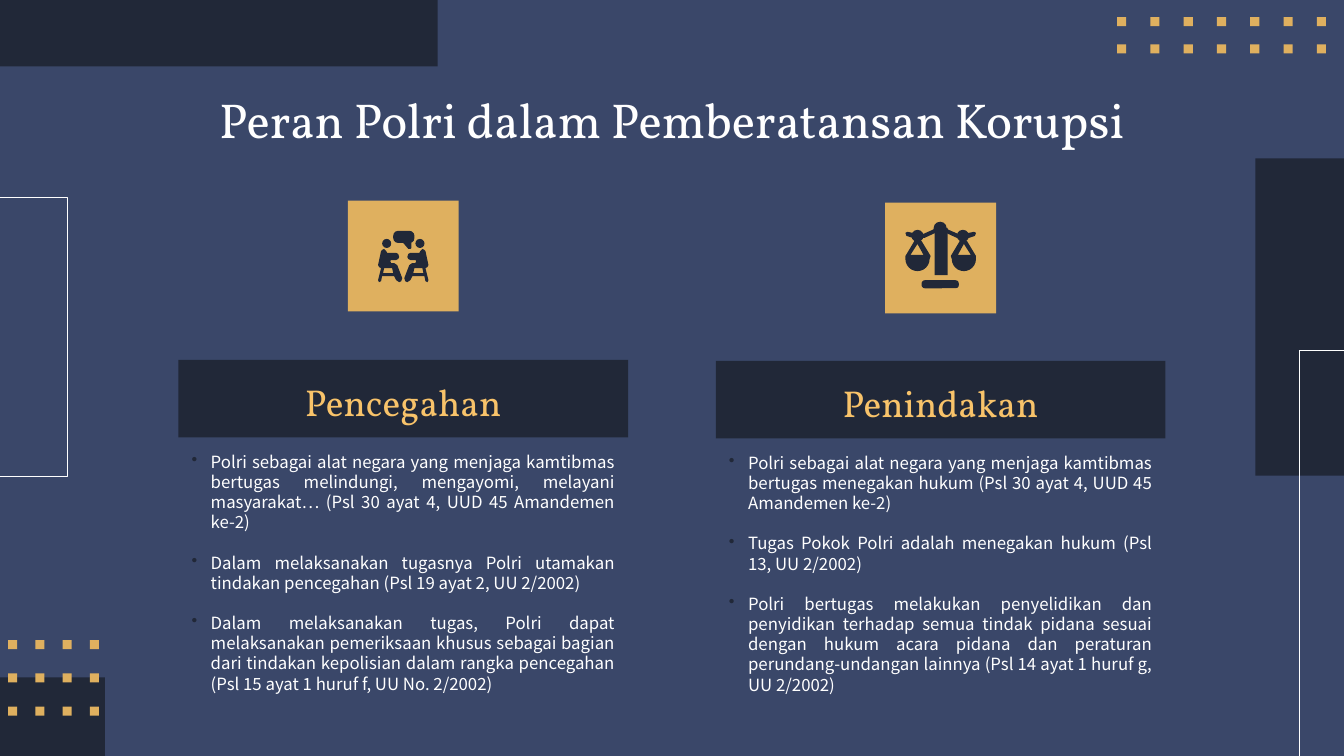
import math
from dataclasses import dataclass

from lxml import etree
from pptx import Presentation, util as u
from pptx.dml.color import RGBColor
from pptx.enum import shapes, text
from pptx.oxml import ns

Inches, Pt = u.Inches, u.Pt


@dataclass(frozen=True)
class Theme:
    back: str = "3A4769"
    dark: str = "212838"
    gold: str = "DFB05F"
    heading: str = "F8C36A"
    white: str = "FFFFFF"
    serif: str = "Vollkorn"
    sans: str = "Noto Sans CJK SC"
    title_size: float = 35
    heading_size: float = 26.7
    body_size: float = 12
    body_line: float = 14.4


T = Theme()
RECT, OVAL = shapes.MSO_SHAPE.RECTANGLE, shapes.MSO_SHAPE.OVAL
ROUND = shapes.MSO_SHAPE.ROUNDED_RECTANGLE
LEFT_X, COLUMN_STEP = 1.77, 5.33

COLUMNS = [
    ("Pencegahan", 3.57, 1.99, [
        "Polri sebagai alat negara yang menjaga kamtibmas bertugas melindungi, "
        "mengayomi, melayani masyarakat… (Psl 30 ayat 4, UUD 45 Amandemen ke-2)",
        "Dalam melaksanakan tugasnya Polri utamakan tindakan pencegahan "
        "(Psl 19 ayat 2, UU 2/2002)",
        "Dalam melaksanakan tugas, Polri dapat melaksanakan pemeriksaan khusus "
        "sebagai bagian dari tindakan kepolisian dalam rangka pencegahan "
        "(Psl 15 ayat 1 huruf f, UU No. 2/2002)",
    ]),
    ("Penindakan", 3.58, 2.01, [
        "Polri sebagai alat negara yang menjaga kamtibmas bertugas menegakan "
        "hukum (Psl 30 ayat 4, UUD 45 Amandemen ke-2)",
        "Tugas Pokok Polri adalah menegakan hukum (Psl 13, UU 2/2002)",
        "Polri bertugas melakukan penyelidikan dan penyidikan terhadap semua "
        "tindak pidana sesuai dengan hukum acara pidana dan peraturan "
        "perundang-undangan lainnya (Psl 14 ayat 1 huruf g, UU 2/2002)",
    ]),
]

# Left half of each mirrored icon part
SITTER = [
    (3.81, 2.47), (3.79, 2.48), (3.78, 2.49), (3.75, 2.63), (3.76, 2.65),
    (3.78, 2.66), (3.75, 2.78), (3.76, 2.8), (3.78, 2.79), (3.79, 2.74),
    (3.91, 2.74), (3.93, 2.78), (3.96, 2.8), (3.98, 2.79), (3.99, 2.76),
    (3.94, 2.63), (3.91, 2.61), (3.88, 2.61), (3.87, 2.59), (3.88, 2.58),
    (3.93, 2.58), (3.95, 2.57), (3.96, 2.55), (3.95, 2.52), (3.93, 2.51),
    (3.84, 2.51), (3.83, 2.49),
]
STOOL_GAP = [(3.89, 2.66), (3.9, 2.71), (3.8, 2.71), (3.81, 2.66)]
BEAM = [
    (8.98, 2.31), (9, 2.3), (9.05, 2.31), (9.16, 2.32), (9.25, 2.28),
    (9.3, 2.25), (9.3, 2.3), (9.17, 2.36), (9.05, 2.36), (8.99, 2.34),
]
PAN_GAP = [(9.1, 2.42), (9.16, 2.53), (9.03, 2.53)]


def paint(sp, fill=None, line=None):
    sp.shadow.inherit = False
    if fill:
        sp.fill.solid()
        sp.fill.fore_color.rgb = RGBColor.from_string(fill)
    else:
        sp.fill.background()
    if line:
        sp.line.color.rgb = RGBColor.from_string(line)
        sp.line.width = Pt(0.75)
    else:
        sp.line.fill.background()
    return sp


def box(s, x, y, w, h, fill, kind=RECT):
    sp = s.shapes.add_shape(kind, Inches(x), Inches(y), Inches(w), Inches(h))
    return paint(sp, fill)


def outline(s, *contours, fill=None, line=None):
    """Draw one or more contours; filled ones are closed."""
    scaled = [[(Inches(x), Inches(y)) for x, y in c] for c in contours]
    fb = s.shapes.build_freeform(*scaled[0][0], scale=1.0)
    for i, points in enumerate(scaled):
        if i:
            fb.move_to(*points[0])
        fb.add_line_segments(points[1:], close=bool(fill))
    return paint(fb.convert_to_shape(), fill, line)


def mirrored(s, axis, *contours):
    """Draw contours and their reflection across a vertical axis."""
    outline(s, *contours, fill=T.dark)
    flipped = [[(2 * axis - x, y) for x, y in c] for c in contours]
    outline(s, *flipped, fill=T.dark)


def dots(s, x, y, cols, rows, dx, dy):
    for row in range(rows):
        for col in range(cols):
            box(s, x + col * dx, y + row * dy, 0.09, 0.09, T.gold)


def write(sp, paragraphs, *, size, font, color, align=text.PP_ALIGN.CENTER,
          anchor=text.MSO_ANCHOR.TOP, line=None, bullet=None):
    tf = sp.text_frame
    tf.word_wrap = True
    tf.vertical_anchor = anchor
    tf.margin_left = tf.margin_right = Inches(0.13)
    tf.margin_top = tf.margin_bottom = Inches(0.13)
    for i, content in enumerate(paragraphs):
        p = tf.add_paragraph() if i else tf.paragraphs[0]
        p.alignment = align
        if line:
            p.line_spacing = Pt(line)
            p.space_before = Pt(line if i else 0)
        if bullet:
            add_bullet(p, bullet)
        r = p.add_run()
        r.text = content
        r.font.size, r.font.name = Pt(size), font
        r.font.color.rgb = RGBColor.from_string(color)


def add_bullet(p, color):
    pPr = p._p.get_or_add_pPr()
    pPr.set("marL", str(Inches(0.19)))
    pPr.set("indent", str(-Inches(0.19)))
    buClr = etree.SubElement(pPr, ns.qn("a:buClr"))
    etree.SubElement(buClr, ns.qn("a:srgbClr"), val=color)
    etree.SubElement(pPr, ns.qn("a:buChar"), char="•")


def textbox(s, x, y, w, h):
    return s.shapes.add_textbox(Inches(x), Inches(y), Inches(w), Inches(h))


def decoration(s):
    box(s, 0, 6.72, 1.04, 0.78, T.dark)
    box(s, 12.45, 1.57, 0.88, 3.15, T.dark)
    outline(s, [(0, 1.96), (0.67, 1.96), (0.67, 4.73), (0, 4.73)], line=T.white)
    outline(s, [(12.89, 7.5), (12.89, 3.48), (13.33, 3.48)], line=T.white)
    dots(s, 11.08, 0.17, 7, 2, 0.33, 0.27)
    dots(s, 0.08, 6.35, 4, 3, 0.27, 0.33)
    box(s, 0, 0, 4.34, 0.66, T.dark)


def column(s, x, heading, y, icon_y, points):
    sp = box(s, x, y, 4.46, 0.77, T.dark)
    write(sp, [heading], size=T.heading_size, font=T.serif, color=T.heading,
          anchor=text.MSO_ANCHOR.BOTTOM)
    write(textbox(s, x, y + 0.78, 4.46, 2.67), points, size=T.body_size,
          font=T.sans, color=T.white, align=text.PP_ALIGN.JUSTIFY,
          line=T.body_line, bullet=T.dark)
    box(s, x + 1.68, icon_y, 1.1, 1.1, T.gold)


def meeting_icon(s):
    for x in (3.79, 4.12):
        box(s, x, 2.37, 0.09, 0.09, T.dark, OVAL)
    mirrored(s, 4, SITTER, STOOL_GAP)
    box(s, 3.9, 2.29, 0.21, 0.12, T.dark, ROUND).adjustments[0] = 0.4
    outline(s, [(3.99, 2.4), (4.05, 2.47), (4.07, 2.47), (4.08, 2.46),
                (4.08, 2.4)], fill=T.dark)


def scales_icon(s):
    angles = [math.radians(180 - 15 * i) for i in range(13)]
    bowl = [(9.1 + 0.12 * math.cos(a), 2.57 + 0.12 * math.sin(a)) for a in angles]
    pan = [(9.07, 2.39), (8.98, 2.54), *bowl, (9.23, 2.54), (9.14, 2.39)]
    mirrored(s, 9.33, pan, PAN_GAP)
    mirrored(s, 9.33, BEAM)
    for x in (9.04, 9.49):
        box(s, x, 2.28, 0.12, 0.12, T.dark, OVAL)
    box(s, 9.26, 2.2, 0.13, 0.13, T.dark, OVAL)
    box(s, 9.27, 2.26, 0.13, 0.47, T.dark)
    box(s, 9.14, 2.78, 0.37, 0.08, T.dark, ROUND).adjustments[0] = 0.4


def main():
    prs = Presentation()
    prs.slide_width, prs.slide_height = Inches(13.33), Inches(7.5)
    s = prs.slides.add_slide(prs.slide_layouts[6])
    s.background.fill.solid()
    s.background.fill.fore_color.rgb = RGBColor.from_string(T.back)

    decoration(s)
    write(textbox(s, 1.05, 0.76, 11.23, 0.84),
          ["Peran Polri dalam Pemberatansan Korupsi"],
          size=T.title_size, font=T.serif, color=T.white)
    for i, content in enumerate(COLUMNS):
        column(s, LEFT_X + i * COLUMN_STEP, *content)
    meeting_icon(s)
    scales_icon(s)
    prs.save("out.pptx")


if __name__ == "__main__":
    main()
